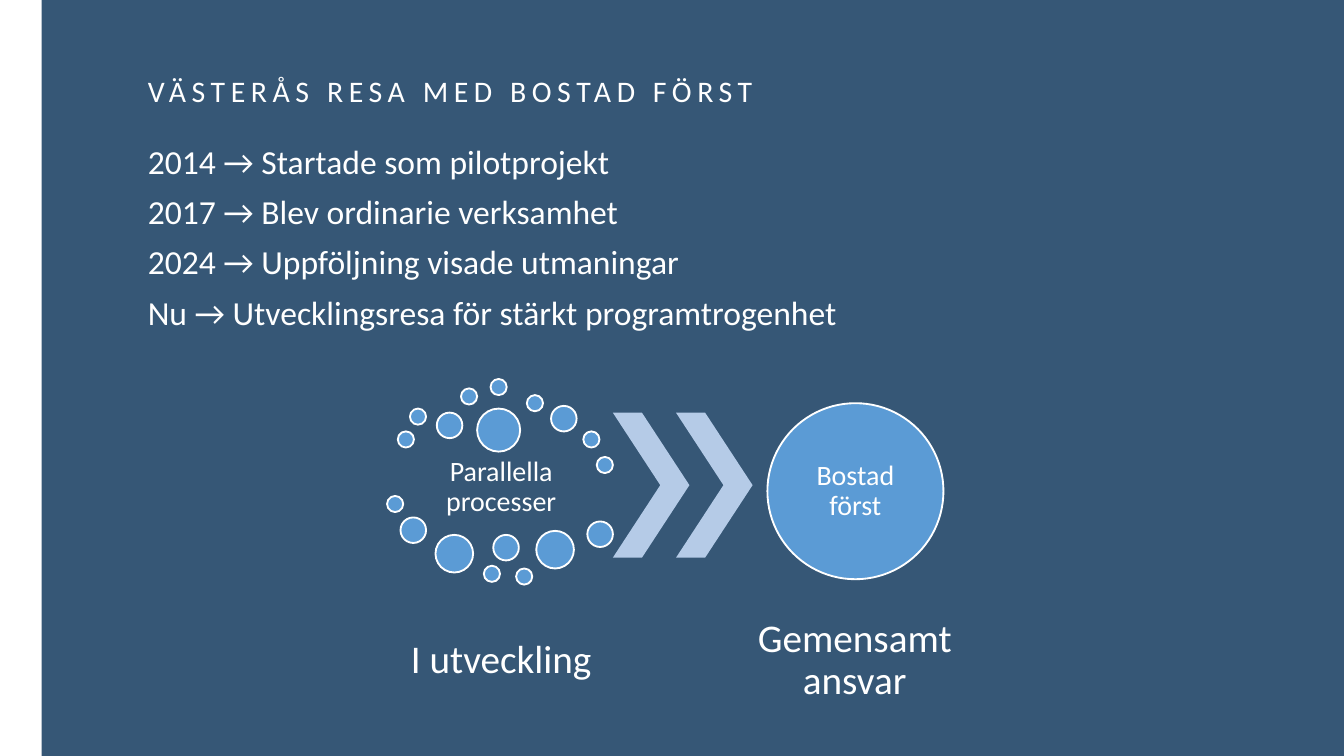
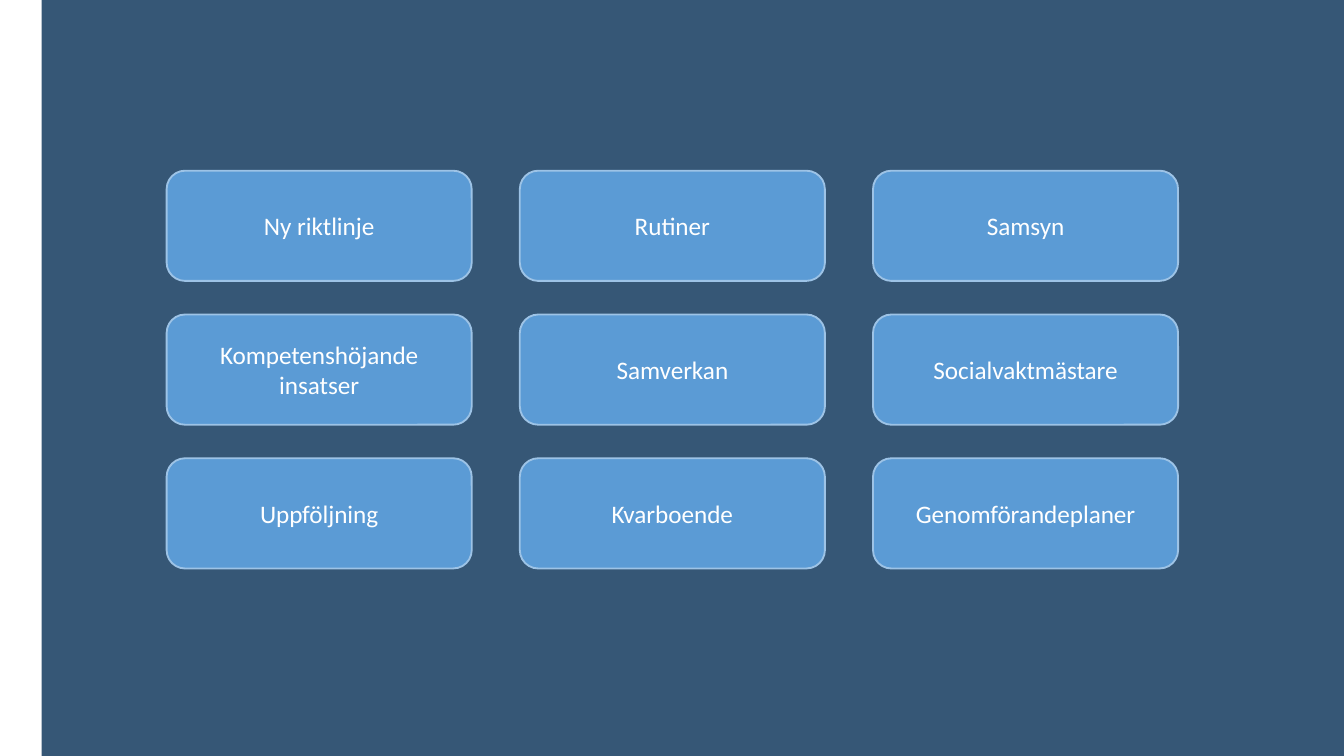
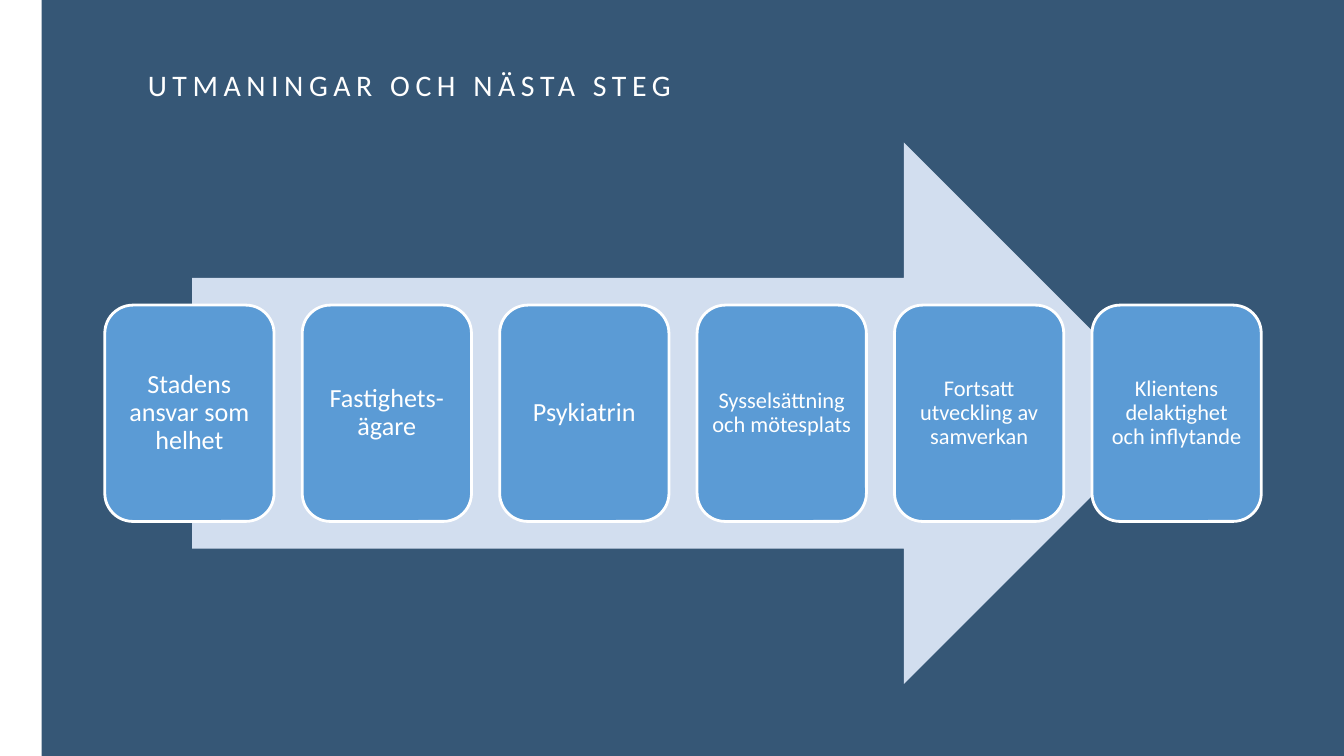
from dataclasses import dataclass
from lxml import etree
from pptx import Presentation
from pptx.dml.color import RGBColor
from pptx.enum.shapes import MSO_SHAPE
from pptx.enum.text import MSO_ANCHOR, PP_ALIGN
from pptx.oxml.ns import qn
from pptx.util import Inches, Pt

RECT, ROUND = MSO_SHAPE.RECTANGLE, MSO_SHAPE.ROUNDED_RECTANGLE
OVAL, CHEVRON, ARROW = MSO_SHAPE.OVAL, MSO_SHAPE.CHEVRON, MSO_SHAPE.RIGHT_ARROW
TOP, MIDDLE = MSO_ANCHOR.TOP, MSO_ANCHOR.MIDDLE
LEFT, CENTER = PP_ALIGN.LEFT, PP_ALIGN.CENTER


@dataclass(frozen=True)
class Theme:
    font: str = "Calibri"
    white: str = "FFFFFF"
    navy: str = "042E54"
    blue: str = "5B9BD5"
    edge: str = "9DC3E6"
    pale: str = "B5CBE7"
    mist: str = "D2DEEF"
    title: float = 16
    body: float = 18
    caption: float = 21
    hub: float = 15
    card: float = 13.5
    step: float = 14
    small: float = 12


THEME = Theme()

# Square grid: 100 columns across the slide, 56.25 rows down
COLS, ROWS = 100, 56.25
CELL = Inches(10) / COLS

# Bubbles around the hub: column, row, diameter
BUBBLES = [
    (29.6, 32.1, 1.2), (30.5, 30.4, 1.2), (32.5, 30.7, 1.9),
    (34.3, 28.9, 1.2), (36.5, 28.2, 1.2), (39.2, 29.4, 1.2),
    (41, 30.2, 1.9), (43.4, 32.1, 1.2), (44.4, 34, 1.2),
    (35.5, 30.4, 3.2), (28.8, 36.9, 1.2), (29.8, 38.5, 1.9),
    (32.4, 39.8, 2.8), (36, 42.1, 1.2), (36.7, 39.8, 1.9),
    (38.4, 42.3, 1.2), (39.9, 39.5, 2.8), (43.7, 38.8, 1.9),
]
CARDS = [
    ["Ny riktlinje", "Rutiner", "Samsyn"],
    ["Kompetenshöjande\ninsatser", "Samverkan", "Socialvaktmästare"],
    ["Uppföljning", "Kvarboende", "Genomförandeplaner"],
]
STEPS = [
    ("Stadens ansvar som helhet", THEME.step),
    ("Fastighets-ägare", THEME.step),
    ("Psykiatrin", THEME.step),
    ("Sysselsättning och mötesplats", THEME.small),
    ("Fortsatt utveckling av samverkan", THEME.small),
    ("Klientens delaktighet och inflytande", THEME.small),
]


def grid(*cells):
    return [round(n * CELL) for n in cells]


def draw(slide, kind, box, fill, line=None, width=1):
    """Add a flat preset shape; box is column, row, columns, rows."""
    shape = slide.shapes.add_shape(kind, *grid(*box))
    shape.shadow.inherit = False
    shape.fill.solid()
    shape.fill.fore_color.rgb = RGBColor.from_string(fill)
    if line:
        shape.line.color.rgb = RGBColor.from_string(line)
        shape.line.width = Pt(width)
    else:
        shape.line.fill.background()
    return shape


def write(shape, text, size, align=CENTER, anchor=MIDDLE,
          inset=0.0, lead=0.9, gap=0, track=0):
    """Fill a shape or text box with styled paragraphs."""
    frame = shape.text_frame
    frame.text = text
    frame.word_wrap = True
    frame.vertical_anchor = anchor
    frame.margin_left = frame.margin_right = Inches(inset)
    frame.margin_top = frame.margin_bottom = Inches(inset)
    for i, para in enumerate(frame.paragraphs):
        para.alignment = align
        para.line_spacing = lead
        para.space_before = Pt(gap if i else 0)
        for run in para.runs:
            run.font.name = THEME.font
            run.font.size = Pt(size)
            run.font.color.rgb = RGBColor.from_string(THEME.white)
            if track:
                run._r.get_or_add_rPr().set("spc", str(track * 100))


def label(slide, box, text, size, **style):
    write(slide.shapes.add_textbox(*grid(*box)), text, size, **style)


def title(slide, row, text):
    label(slide, (11, row, 76.5, 3.7), text, THEME.title,
          align=LEFT, anchor=TOP, track=3)


def page(deck):
    """Add a blank slide with the translucent navy panel."""
    slide = deck.slides.add_slide(deck.slide_layouts[6])
    panel = draw(slide, RECT, (3.1, 0, COLS - 3.1, ROWS), THEME.navy)
    tint = panel._element.spPr.find(".//" + qn("a:srgbClr"))
    etree.SubElement(tint, qn("a:alpha"), val="80000")
    return slide


def journey(deck):
    slide = page(deck)
    title(slide, 5.7, "VÄSTERÅS RESA MED BOSTAD FÖRST")
    label(slide, (11, 10.8, 59.9, 14.5),
          "2014 → Startade som pilotprojekt\n"
          "2017 → Blev ordinarie verksamhet\n"
          "2024 → Uppföljning visade utmaningar\n"
          "Nu → Utvecklingsresa för stärkt programtrogenhet",
          THEME.body, align=LEFT, anchor=TOP, gap=7.5)

    # Parallel processes lead to one shared circle
    label(slide, (29.6, 33.7, 15.4, 5.1), "Parallella processer",
          THEME.hub, inset=0.02)
    for col, row, size in BUBBLES:
        draw(slide, OVAL, (col, row, size, size), THEME.blue, THEME.white)
    for col in (45.6, 50.3):
        mark = draw(slide, CHEVRON, (col, 30.7, 5.7, 10.8), THEME.pale)
        mark.adjustments[0] = 0.62
    goal = draw(slide, OVAL, (57.1, 30, 13.1, 13.1), THEME.blue, THEME.white)
    write(goal, "Bostad först", THEME.hub)
    for col, text in ((29.6, "I utveckling"), (55.9, "Gemensamt ansvar")):
        label(slide, (col, 44.4, 15.4, 9.5), text, THEME.caption, inset=0.03)


def efforts(deck):
    slide = page(deck)
    for r, names in enumerate(CARDS):
        for c, name in enumerate(names):
            box = (12.4 + 26.28 * c, 12.7 + 10.7 * r, 22.7, 8.2)
            card = draw(slide, ROUND, box, THEME.blue, THEME.edge)
            write(card, name, THEME.card, inset=0.05, lead=1)


def future(deck):
    slide = page(deck)
    title(slide, 5.3, "UTMANINGAR OCH NÄSTA STEG")
    draw(slide, ARROW, (14.3, 10.6, 73.1, 40.3), THEME.mist)
    for i, (text, size) in enumerate(STEPS):
        box = (7.8 + 14.69 * i, 22.7, 12.6, 16.1)
        step = draw(slide, ROUND, box, THEME.blue, THEME.white, 1.5)
        write(step, text, size, inset=0.05)


def main():
    deck = Presentation()
    deck.slide_width, deck.slide_height = grid(COLS, ROWS)
    journey(deck)
    efforts(deck)
    future(deck)
    deck.save("out.pptx")


if __name__ == "__main__":
    main()
